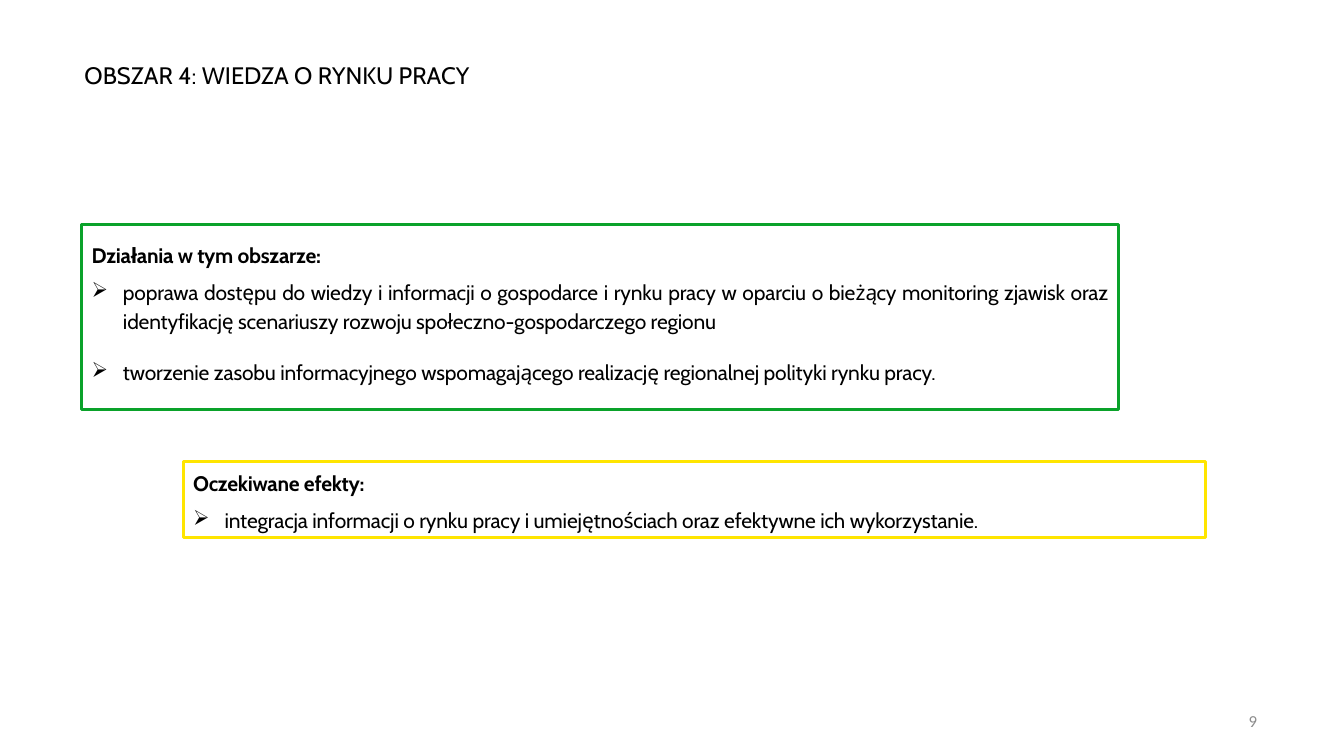
from lxml.etree import SubElement
from pptx import Presentation
from pptx.dml.color import RGBColor as RGB
from pptx.enum.shapes import MSO_SHAPE as SHAPE
from pptx.enum.text import MSO_ANCHOR as ANCHOR, PP_ALIGN as ALIGN
from pptx.oxml.ns import qn
from pptx.util import Cm, Pt

TITLE = "OBSZAR 4: WIEDZA O RYNKU PRACY"
PAGE = "9"
PANELS = [
    {
        "at": (2.06, 5.66, 26.14, 4.65),
        "line": "green",
        "heading": "Działania w tym obszarze:",
        "heading_spacing": 1.5,
        "heading_after": 0,
        "bullet_before": 6,
        "bullet_after": 10,
        "bullets": [
            "poprawa dostępu do wiedzy i informacji o gospodarce i rynku pracy w oparciu o "
            "bieżący monitoring zjawisk oraz identyfikację scenariuszy rozwoju "
            "społeczno-gospodarczego regionu",
            "tworzenie zasobu informacyjnego wspomagającego realizację regionalnej polityki "
            "rynku pracy.",
        ],
    },
    {
        "at": (4.62, 11.63, 25.76, 1.91),
        "line": "yellow",
        "heading": "Oczekiwane efekty:",
        "heading_spacing": 1.15,
        "heading_after": 6,
        "bullet_before": 0,
        "bullet_after": 3,
        "bullets": [
            "integracja informacji o rynku pracy i umiejętnościach oraz efektywne ich "
            "wykorzystanie.",
        ],
    },
]

THEME = {
    "font": "Cabin", "page_font": "Calibri",
    "title": 17, "body": 15, "page": 12,
    "black": "000000", "grey": "8C8C8C", "white": "FFFFFF",
    "green": "0AA22A", "yellow": "FFE500",
}
INDENT = Cm(0.79)


def color(name):
    return RGB.from_string(THEME[name])


def style(p, size, font="font", fill="black", bold=False, tracking=0):
    for r in p.runs:
        r.font.name = THEME[font]
        r.font.size = Pt(THEME[size])
        r.font.bold = bold
        r.font.color.rgb = color(fill)
        if tracking:
            r.font._element.set("spc", str(tracking))


def space(p, line, before=0, after=0):
    p.line_spacing = line
    p.space_before = Pt(before)
    p.space_after = Pt(after)


def add_bullet(p):
    pPr = p._p.get_or_add_pPr()
    pPr.set("marL", str(INDENT))
    pPr.set("indent", str(-INDENT))
    SubElement(pPr, qn("a:buChar")).set("char", "➢")


def add_label(slide, at, text):
    tf = slide.shapes.add_textbox(*map(Cm, at)).text_frame
    tf.word_wrap = True
    tf.vertical_anchor = ANCHOR.MIDDLE
    tf.text = text
    return tf.paragraphs[0]


def add_panel(slide, panel):
    sp = slide.shapes.add_shape(SHAPE.RECTANGLE, *map(Cm, panel["at"]))
    sp.shadow.inherit = False
    sp.fill.solid()
    sp.fill.fore_color.rgb = color("white")
    sp.line.color.rgb = color(panel["line"])
    sp.line.width = Pt(2.25)
    tf = sp.text_frame
    tf.word_wrap = True
    tf.vertical_anchor = ANCHOR.TOP
    p = tf.paragraphs[0]
    p.text = panel["heading"]
    p.alignment = ALIGN.LEFT
    space(p, panel["heading_spacing"], after=panel["heading_after"])
    style(p, "body", bold=True, tracking=-20)
    for text in panel["bullets"]:
        p = tf.add_paragraph()
        p.text = text
        add_bullet(p)
        p.alignment = ALIGN.JUSTIFY
        space(p, 1.15, panel["bullet_before"], panel["bullet_after"])
        style(p, "body", tracking=-10)


def main():
    prs = Presentation()
    prs.slide_width, prs.slide_height = Cm(33.87), Cm(19.05)
    slide = prs.slides.add_slide(prs.slide_layouts[6])

    title = add_label(slide, (1.88, 0.38, 30.07, 2.64), TITLE)
    space(title, 1.5)
    style(title, "title")

    page = add_label(slide, (23.93, 17.65, 8, 1.02), PAGE)
    page.alignment = ALIGN.RIGHT
    style(page, "page", font="page_font", fill="grey")

    for panel in PANELS:
        add_panel(slide, panel)
    prs.save("out.pptx")


if __name__ == "__main__":
    main()
